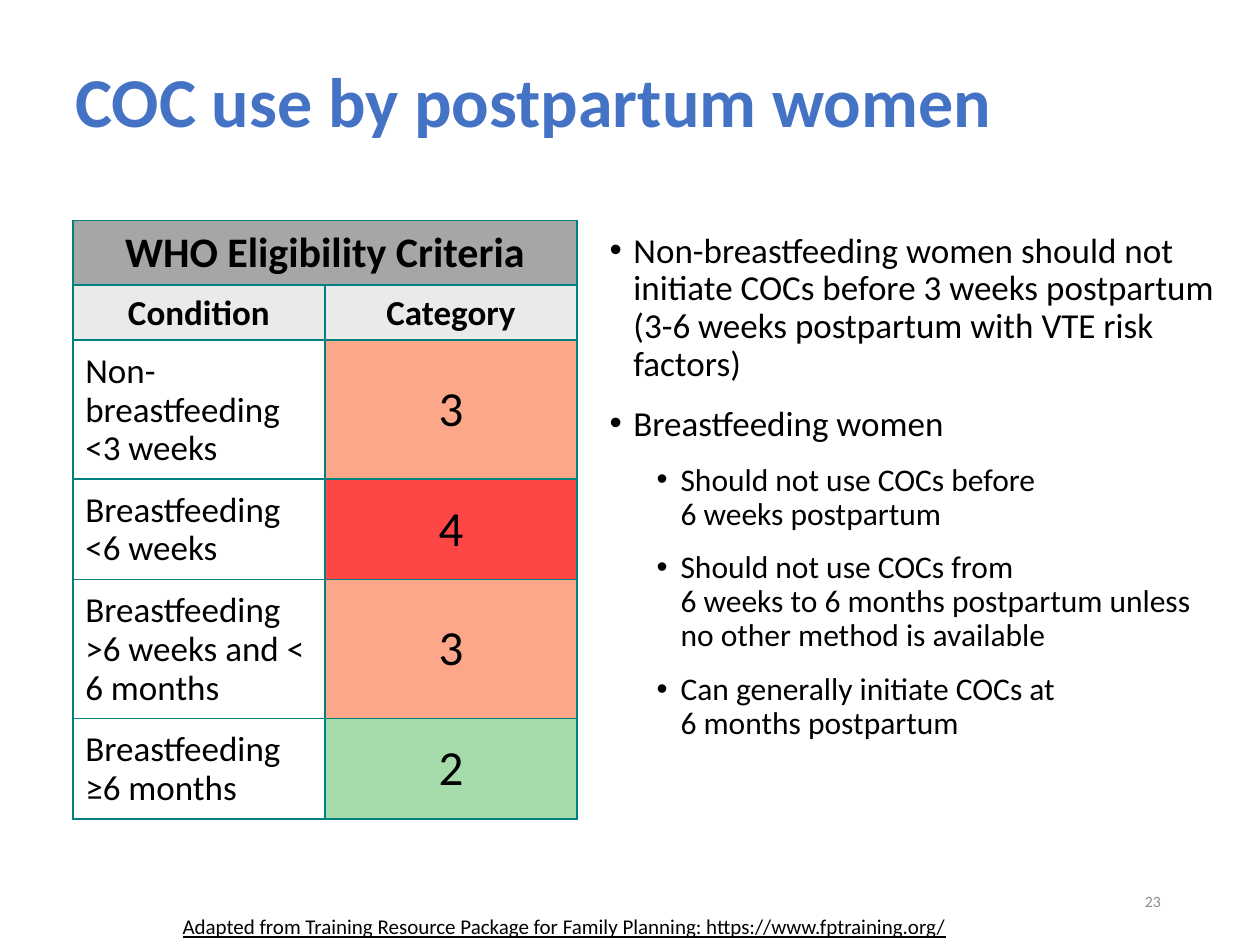
from lxml import etree
from pptx import Presentation
from pptx.dml.color import RGBColor
from pptx.enum.text import MSO_ANCHOR, PP_ALIGN
from pptx.oxml.ns import qn
from pptx.util import Cm, Pt

LEFT, MID, RIGHT = PP_ALIGN.LEFT, PP_ALIGN.CENTER, PP_ALIGN.RIGHT
TOP, CENTER = MSO_ANCHOR.TOP, MSO_ANCHOR.MIDDLE

TEAL, GREY, PALE, WHITE = "008080", "A6A6A6", "EAEAEA", "FFFFFF"
PEACH, RED, GREEN = "FCA789", "FF4646", "A6DBAB"

POINTS = [
    (0, "Non-breastfeeding women should not initiate COCs before 3 weeks "
        "postpartum (3-6 weeks postpartum with VTE risk factors)"),
    (0, "Breastfeeding women"),
    (1, "Should not use COCs before \v6 weeks postpartum"),
    (1, "Should not use COCs from \v6 weeks to 6 months postpartum unless "
        "no other method is available"),
    (1, "Can generally initiate COCs at \v6 months postpartum"),
]
CASES = [
    ("Non-breastfeeding <3 weeks", "3", PEACH, CENTER),
    ("Breastfeeding <6 weeks", "4", RED, CENTER),
    ("Breastfeeding >6 weeks and < 6 months", "3", PEACH, TOP),
    ("Breastfeeding ≥6 months", "2", GREEN, TOP),
]


def tint(code):
    return RGBColor.from_string(code)


def write(par, text, size=20, color="000000", bold=False, under=False,
          align=LEFT, pitch=1.0, before=0):
    par.text = text
    par.alignment = align
    par.line_spacing = pitch
    par.space_before = Pt(before)
    for run in par.runs:
        font = run.font
        font.name = "Calibri"
        font.size = Pt(size)
        font.bold = bold
        font.underline = under
        font.color.rgb = tint(color)


class Page:
    def __init__(self, slide):
        self.slide = slide

    def frame(self, left, top, width, height, anchor=TOP):
        box = self.slide.shapes.add_textbox(
            Cm(left), Cm(top), Cm(width), Cm(height))
        frame = box.text_frame
        frame.word_wrap = True
        frame.vertical_anchor = anchor
        return frame

    def label(self, left, top, width, height, text, anchor=TOP, **style):
        frame = self.frame(left, top, width, height, anchor)
        write(frame.paragraphs[0], text, **style)

    def points(self, left, top, width, height, items):
        frame = self.frame(left, top, width, height)
        for spot, (level, text) in enumerate(items):
            par = frame.add_paragraph() if spot else frame.paragraphs[0]
            size = 18 if level else 20
            write(par, text, size=size, pitch=0.9, before=size * 0.63)
            props = par._p.get_or_add_pPr()
            props.set("lvl", str(level))
            props.set("marL", str(Cm(0.48 + 0.95 * level)))
            props.set("indent", str(Cm(-0.48)))
            etree.SubElement(props, qn("a:buFont"), typeface="Arial")
            etree.SubElement(props, qn("a:buChar"), char="•")

    def grid(self, left, top, cols, rows):
        shape = self.slide.shapes.add_table(
            len(rows), len(cols), Cm(left), Cm(top),
            Cm(sum(cols)), Cm(sum(rows)))
        table = shape.table
        table.first_row = table.horz_banding = False
        for col, width in zip(table.columns, cols):
            col.width = Cm(width)
        for row, height in zip(table.rows, rows):
            row.height = Cm(height)
        for cell in table.iter_cells():
            self.edge(cell)
        return table

    def edge(self, cell):
        props = cell._tc.get_or_add_tcPr()
        for side in ("a:lnL", "a:lnR", "a:lnT", "a:lnB"):
            line = etree.SubElement(props, qn(side), w=str(Pt(1)))
            fill = etree.SubElement(line, qn("a:solidFill"))
            etree.SubElement(fill, qn("a:srgbClr"), val=TEAL)

    def cell(self, cell, text, fill, pad=0.25, anchor=CENTER, **style):
        cell.fill.solid()
        cell.fill.fore_color.rgb = tint(fill)
        cell.margin_left = cell.margin_right = Cm(0.25)
        cell.margin_top = cell.margin_bottom = Cm(pad)
        cell.vertical_anchor = anchor
        write(cell.text_frame.paragraphs[0], text, **style)


def main():
    deck = Presentation()
    deck.slide_width, deck.slide_height = Cm(25.4), Cm(19.05)
    page = Page(deck.slides.add_slide(deck.slide_layouts[6]))

    page.label(1.27, 0.53, 22.86, 3.18, "COC use by postpartum women",
               anchor=CENTER, size=40, color="4472C4", bold=True, pitch=0.9)
    page.points(12.04, 4.57, 12.93, 13, POINTS)

    table = page.grid(1.47, 4.45, [5.08, 5.08],
                      [1.3, 1.1, 2.8, 2.03, 2.8, 2.03])
    table.cell(0, 0).merge(table.cell(0, 1))
    head = {"pad": 0.13, "bold": True, "align": MID}
    page.cell(table.cell(0, 0), "WHO Eligibility Criteria", GREY,
              size=24, **head)
    for col, text in enumerate(["Condition", "Category"]):
        page.cell(table.cell(1, col), text, PALE, **head)
    for row, (state, grade, fill, anchor) in enumerate(CASES, 2):
        page.cell(table.cell(row, 0), state, WHITE, anchor=anchor, pitch=0.9)
        page.cell(table.cell(row, 1), grade, fill, size=28, align=MID)

    page.label(17.93, 17.65, 5.72, 1.02, "23", anchor=CENTER,
               size=9, color="8C8C8C", align=RIGHT)
    page.label(3.43, 18.29, 17.63, 0.69,
               "Adapted from Training Resource Package for Family Planning: "
               "https://www.fptraining.org/", size=12, under=True)
    deck.save("out.pptx")


if __name__ == "__main__":
    main()
